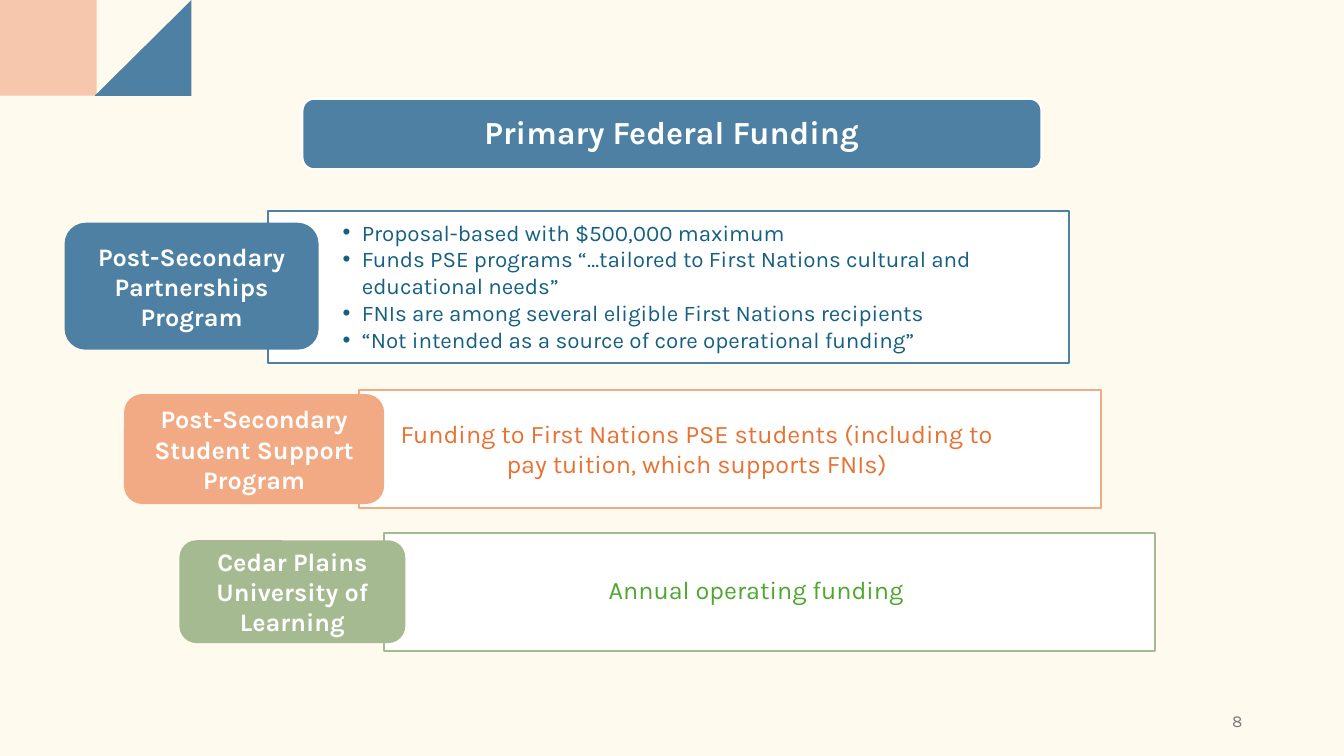
from dataclasses import dataclass

from lxml import etree
from pptx import Presentation
from pptx.dml.color import RGBColor
from pptx.enum.shapes import MSO_SHAPE as SHAPE
from pptx.enum.text import MSO_ANCHOR as ANCHOR, PP_ALIGN as ALIGN
from pptx.oxml.ns import qn
from pptx.util import Inches, Pt

FONT = "Karla"
COLORS = {
    "cream": "FFFAEE",
    "white": "FFFFFF",
    "blue": "4D80A2",
    "peach": "F6C6AD",
    "orange": "F2AA84",
    "green": "A6BA92",
    "blue text": "156082",
    "orange text": "E97132",
    "green text": "4EA72E",
    "gray text": "797979",
}
Box = tuple[float, float, float, float]


@dataclass
class Program:
    name: str
    details: list[str]
    color: str
    label: Box
    panel: Box
    body: Box
    size: int = 18
    bulleted: bool = False
    inset: Box = (0.1, 0.05, 0.1, 0.05)


PROGRAMS = [
    Program("Post-Secondary Partnerships Program",
            ["Proposal-based with $500,000 maximum",
             "Funds PSE programs “…tailored to First Nations cultural and educational needs”",
             "FNIs are among several eligible First Nations recipients",
             "“Not intended as a source of core operational funding”"],
            "blue", (0.64, 2.21, 2.52, 1.26), (2.66, 2.09, 7.94, 1.51),
            (3.3, 2.12, 7.15, 1.45), size=16, bulleted=True),
    Program("Post-Secondary Student Support Program",
            ["Funding to First Nations PSE students (including to pay tuition, "
             "which supports FNIs)"],
            "orange", (1.23, 3.91, 2.58, 1.09), (3.56, 3.87, 7.36, 1.17),
            (3.81, 4.1, 6.2, 0.71)),
    Program("Cedar Plains University of Learning", ["Annual operating funding"],
            "green", (1.78, 5.36, 2.24, 1.02), (3.81, 5.29, 7.65, 1.17),
            (4.4, 5.65, 6.2, 0.4), inset=(0.01, 0.01, 0.01, 0.01)),
]


def rgb(name: str) -> RGBColor:
    return RGBColor.from_string(COLORS[name])


def add_bullet(p) -> None:
    pPr = p._p.get_or_add_pPr()
    pPr.set("marL", str(Inches(0.19)))
    pPr.set("indent", str(-Inches(0.19)))
    etree.SubElement(pPr, qn("a:buFont"), typeface="Arial")
    etree.SubElement(pPr, qn("a:buChar"), char="•")


def write(s, *lines: str, size: int = 18, color: str = "white", bold: bool = False,
          align=ALIGN.CENTER, anchor=ANCHOR.MIDDLE, bulleted: bool = False,
          inset: Box = (0.1, 0.05, 0.1, 0.05)) -> None:
    """Fill a shape with one formatted paragraph per line."""
    tf = s.text_frame
    tf.word_wrap = True
    tf.vertical_anchor = anchor
    tf.margin_left, tf.margin_top, tf.margin_right, tf.margin_bottom = map(Inches, inset)
    for i, line in enumerate(lines):
        p = tf.add_paragraph() if i else tf.paragraphs[0]
        p.alignment = align
        if bulleted:
            add_bullet(p)
        r = p.add_run()
        r.text = line
        r.font.name, r.font.size, r.font.bold = FONT, Pt(size), bold
        r.font.color.rgb = rgb(color)


def add_block(sl, kind, box: Box, fill: str, line: str | None = None):
    s = sl.shapes.add_shape(kind, *map(Inches, box))
    s.shadow.inherit = False
    s.fill.solid()
    s.fill.fore_color.rgb = rgb(fill)
    if line:
        s.line.color.rgb = rgb(line)
        s.line.width = Pt(1.5)
    else:
        s.line.fill.background()
    return s


def add_text(sl, box: Box, *lines: str, **style) -> None:
    write(sl.shapes.add_textbox(*map(Inches, box)), *lines, **style)


def add_corner(sl) -> None:
    add_block(sl, SHAPE.RECTANGLE, (0, 0, 0.96, 0.95), "peach")
    s = add_block(sl, SHAPE.RIGHT_TRIANGLE, (0.94, 0, 0.96, 0.95), "blue")
    s._element.spPr.get_or_add_xfrm().set("flipH", "1")


def add_program(sl, program: Program) -> None:
    add_block(sl, SHAPE.RECTANGLE, program.panel, "white", program.color)
    add_text(sl, program.body, *program.details, size=program.size,
             color=f"{program.color} text", bulleted=program.bulleted,
             align=ALIGN.LEFT if program.bulleted else ALIGN.CENTER, anchor=ANCHOR.TOP)
    label = add_block(sl, SHAPE.ROUNDED_RECTANGLE, program.label, program.color)
    write(label, program.name, bold=True, inset=program.inset)


def main() -> None:
    prs = Presentation()
    prs.slide_width, prs.slide_height = Inches(13.33), Inches(7.5)
    sl = prs.slides.add_slide(prs.slide_layouts[6])
    sl.background.fill.solid()
    sl.background.fill.fore_color.rgb = rgb("cream")

    add_corner(sl)
    title = add_block(sl, SHAPE.ROUNDED_RECTANGLE, (3, 0.98, 7.33, 0.7), "blue", "white")
    write(title, "Primary Federal Funding", size=23, bold=True, inset=(0.1, 0.04, 0.1, 0.08))
    for program in PROGRAMS:
        add_program(sl, program)
    add_text(sl, (9.42, 6.95, 3, 0.4), "8", size=12, color="gray text", align=ALIGN.RIGHT)
    prs.save("out.pptx")


if __name__ == "__main__":
    main()
